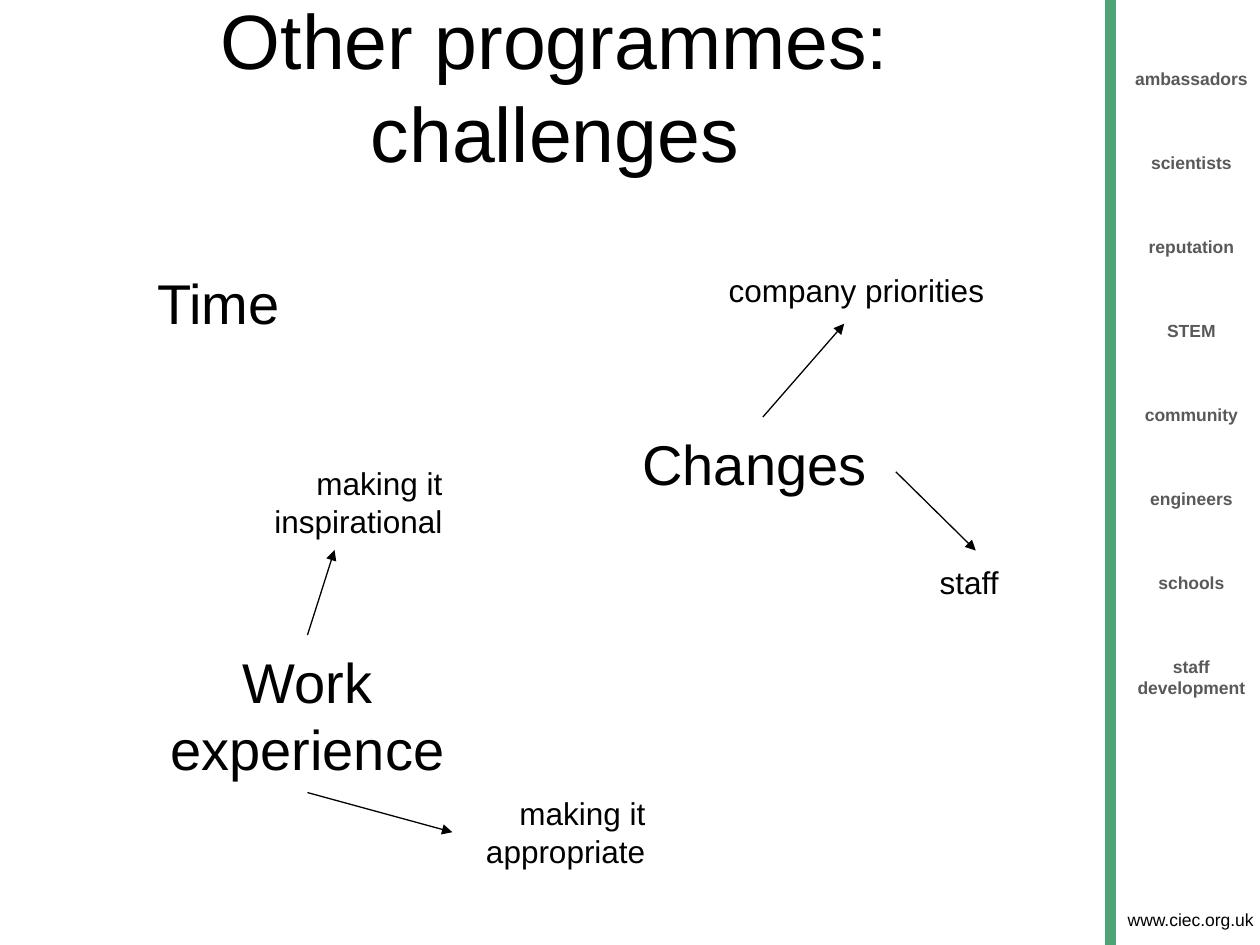
from dataclasses import dataclass

from lxml.etree import SubElement
from pptx import Presentation
from pptx.dml.color import RGBColor as Rgb
from pptx.enum.shapes import MSO_CONNECTOR as Connector, MSO_SHAPE as Shape
from pptx.enum.text import MSO_ANCHOR as Anchor, MSO_AUTO_SIZE as AutoSize, PP_ALIGN as Align
from pptx.oxml.ns import qn
from pptx.util import Pt

TOP, LEFT, BOTTOM, RIGHT = range(4)
KEYWORDS = ["ambassadors", "scientists", "reputation", "STEM",
            "community", "engineers", "schools", "staff development"]


@dataclass(frozen=True)
class Theme:
    """Colours and type sizes of the slide."""
    font: str = "Arial"
    ink: Rgb = Rgb(0, 0, 0)
    muted: Rgb = Rgb(0x59, 0x59, 0x59)
    accent: Rgb = Rgb(0x4E, 0xA4, 0x77)
    title: int = 44
    topic: int = 32
    detail: int = 18
    small: int = 10


THEME = Theme()


def place(shape, box):
    """Move a shape to a left, top, width, height box in points."""
    shape.left, shape.top, shape.width, shape.height = map(Pt, box)


def write(shape, lines, *, size, color=THEME.ink, bold=False, align=Align.LEFT,
          anchor=Anchor.TOP, inset=(7.2, 7.2), gap=0):
    """Fill a shape with formatted paragraphs."""
    frame = shape.text_frame
    frame.word_wrap = True
    frame.auto_size = AutoSize.NONE
    frame.vertical_anchor = anchor
    frame.margin_left = frame.margin_right = Pt(inset[0])
    frame.margin_top = frame.margin_bottom = Pt(inset[1])
    for index, line in enumerate(lines):
        paragraph = frame.add_paragraph() if index else frame.paragraphs[0]
        paragraph.text = line
        paragraph.alignment = align
        paragraph.space_before = Pt(gap if index else 0)
        font = paragraph.font
        font.name, font.size, font.bold = THEME.font, Pt(size), bold
        font.color.rgb = color


def add_label(slide, box, *lines, **style):
    """Add a text box and return it."""
    label = slide.shapes.add_textbox(*map(Pt, box))
    write(label, lines, **style)
    return label


def add_bar(slide, box):
    """Add the vertical accent bar."""
    bar = slide.shapes.add_shape(Shape.RECTANGLE, *map(Pt, box))
    bar.shadow.inherit = False
    bar.fill.solid()
    bar.fill.fore_color.rgb = bar.line.color.rgb = THEME.accent
    bar.line.width = Pt(2)


def add_arrow(slide, source, source_side, target, target_side):
    """Join two labels with an arrow."""
    arrow = slide.shapes.add_connector(Connector.STRAIGHT, 0, 0, 0, 0)
    arrow.begin_connect(source, source_side)
    arrow.end_connect(target, target_side)
    arrow.line.color.rgb = THEME.ink
    arrow.line.width = Pt(0.75)
    SubElement(arrow.line._get_or_add_ln(), qn("a:tailEnd"), type="triangle")
    SubElement(arrow._element.spPr, qn("a:effectLst"))


def add_sidebar(slide):
    """Add the bar, the keyword column and the web address."""
    add_bar(slide, (632.2, 0, 4.3, 540))
    add_label(slide, (626.4, 515.5, 108, 19.4), "www.ciec.org.uk", size=THEME.small,
              align=Align.CENTER, anchor=Anchor.MIDDLE, inset=(7.2, 3.6))
    add_label(slide, (637.2, 35.3, 87.1, 479.5), *KEYWORDS, size=THEME.small,
              color=THEME.muted, bold=True, align=Align.CENTER, inset=(7.2, 3.6), gap=36)


def add_challenges(slide):
    """Add the topics, their details and the arrows between them."""
    topic = {"size": THEME.topic}
    detail = {"size": THEME.detail, "align": Align.RIGHT}
    add_label(slide, (82.8, 146.2, 103.7, 62.6), "Time", **topic)
    changes = add_label(slide, (360, 238.3, 151.9, 62.6), "Changes", **topic)
    work = add_label(slide, (82.8, 362.9, 185.8, 90), "Work experience",
                     align=Align.CENTER, **topic)
    staff = add_label(slide, (529.9, 314.6, 55.4, 45.4), "staff", size=THEME.detail)
    priorities = add_label(slide, (395.3, 147.6, 174.2, 37.4), "company priorities", **detail)
    inspirational = add_label(slide, (122.4, 257.8, 137.5, 56.5),
                              "making it inspirational", **detail)
    appropriate = add_label(slide, (258.5, 446.4, 117.4, 58.3),
                            "making it appropriate", **detail)
    add_arrow(slide, changes, RIGHT, staff, TOP)
    add_arrow(slide, changes, TOP, priorities, BOTTOM)
    add_arrow(slide, work, TOP, inspirational, BOTTOM)
    add_arrow(slide, work, BOTTOM, appropriate, LEFT)


def main():
    """Build and save the slide."""
    deck = Presentation()
    deck.slide_width, deck.slide_height = Pt(720), Pt(540)
    slide = deck.slides.add_slide(deck.slide_layouts[5])
    add_sidebar(slide)
    title = slide.shapes.title
    place(title, (36, 3.6, 562.3, 90))
    write(title, ["Other programmes:", "challenges"], size=THEME.title,
          align=Align.CENTER, anchor=Anchor.MIDDLE, inset=(7.2, 3.6))
    add_challenges(slide)
    deck.save("out.pptx")


if __name__ == "__main__":
    main()
